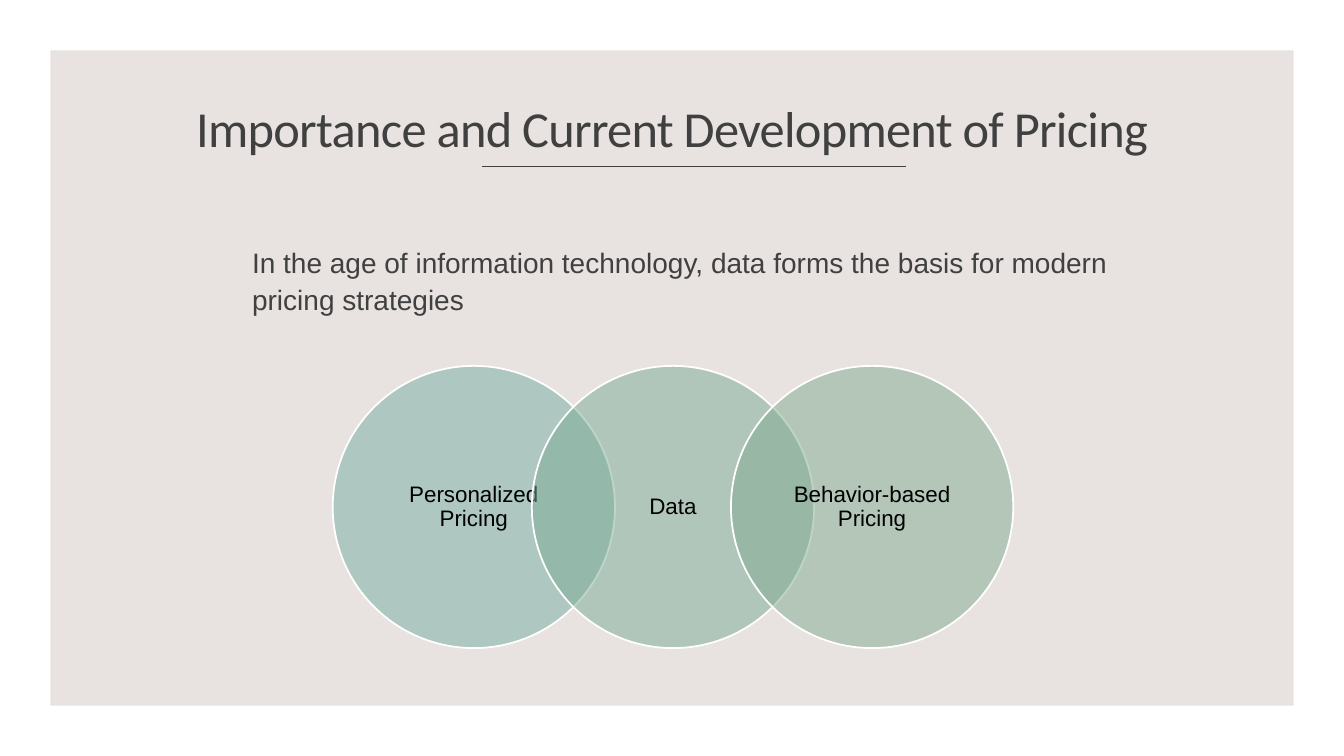
from pptx import Presentation
from pptx import util as u
from pptx.dml.color import RGBColor
from pptx.enum import shapes, text
from pptx.oxml.ns import qn
from lxml import etree

WHITE = RGBColor(0xFF, 0xFF, 0xFF)
BLACK = RGBColor(0x00, 0x00, 0x00)
SAND = RGBColor(0xE8, 0xE2, 0xE1)
GRAPHITE = RGBColor(0x40, 0x40, 0x40)
TEAL = RGBColor(0x76, 0xAD, 0xA0)
SEA = RGBColor(0x7C, 0xAC, 0x97)
SAGE = RGBColor(0x81, 0xAB, 0x90)

CELL = u.Inches(0.1)


def cells(*counts):
    return [round(count * CELL) for count in counts]


class PricingSlide:
    heading_font = "Calibri"
    body_font = "Arial"

    def __init__(self, deck):
        self.slide = deck.slides.add_slide(deck.slide_layouts[5])
        self.slide.background.fill.solid()
        self.slide.background.fill.fore_color.rgb = SAND

    def add_words(self, frame, words, font, size, color, align, spacing, insets=(0, 0)):
        frame.word_wrap = True
        frame.auto_size = text.MSO_AUTO_SIZE.NONE
        frame.vertical_anchor = text.MSO_ANCHOR.MIDDLE
        frame.margin_left = frame.margin_right = u.Inches(insets[0])
        frame.margin_top = frame.margin_bottom = u.Inches(insets[1])
        paragraph = frame.paragraphs[0]
        paragraph.alignment = align
        paragraph.line_spacing = spacing
        run = paragraph.add_run()
        run.text = words
        run.font.name = font
        run.font.size = u.Pt(size)
        run.font.color.rgb = color
        return run

    def title(self, words, *place):
        heading = self.slide.shapes.title
        heading.left, heading.top, heading.width, heading.height = cells(*place)
        run = self.add_words(heading.text_frame, words, self.heading_font, 36, GRAPHITE,
                             text.PP_ALIGN.CENTER, 0.9, (0.1, 0.05))
        run.font._element.set("spc", "-50")
        self.slide.shapes._spTree.append(heading.element)

    def panel(self, color, *place):
        panel = self.slide.shapes.add_shape(shapes.MSO_SHAPE.RECTANGLE, *cells(*place))
        panel.shadow.inherit = False
        panel.fill.solid()
        panel.fill.fore_color.rgb = color
        panel.line.fill.background()

    def rule(self, *ends):
        rule = self.slide.shapes.add_connector(shapes.MSO_CONNECTOR.STRAIGHT, *cells(*ends))
        rule.line.color.rgb = GRAPHITE
        rule.line.width = u.Pt(1)
        etree.SubElement(rule.element.spPr, qn("a:effectLst"))

    def statement(self, words, *place):
        box = self.slide.shapes.add_textbox(*cells(*place))
        self.add_words(box.text_frame, words, self.body_font, 20, GRAPHITE,
                       text.PP_ALIGN.LEFT, 1.1)

    def circle(self, words, color, *place):
        circle = self.slide.shapes.add_shape(shapes.MSO_SHAPE.OVAL, *cells(*place))
        circle.shadow.inherit = False
        circle.fill.solid()
        circle.fill.fore_color.rgb = color
        tint = circle.element.spPr.find(qn("a:solidFill")).find(qn("a:srgbClr"))
        etree.SubElement(tint, qn("a:alpha")).set("val", "50000")
        circle.line.color.rgb = WHITE
        circle.line.width = u.Pt(1.25)
        self.add_words(circle.text_frame, words, self.body_font, 16, BLACK,
                       text.PP_ALIGN.CENTER, 0.9, (0.15, 0.02))


def main():
    deck = Presentation()
    deck.slide_width, deck.slide_height = u.Inches(13.33), u.Inches(7.5)
    pricing = PricingSlide(deck)
    pricing.panel(WHITE, 0, 0, 133.3, 75)
    pricing.panel(SAND, 5, 5, 123.3, 65)
    pricing.title("Importance and Current Development of Pricing", 5, 9.5, 123.3, 7)
    pricing.rule(47.8, 16.5, 89.9, 16.5)
    pricing.statement("In the age of information technology, data forms the basis "
                      "for modern pricing strategies", 25, 23.2, 88.6, 9)
    themes = [("Personalized Pricing", TEAL), ("Data", SEA), ("Behavior-based Pricing", SAGE)]
    for index, (theme, color) in enumerate(themes):
        pricing.circle(theme, color, 33 + index * 19.75, 36.3, 28, 28)
    deck.save("out.pptx")


if __name__ == "__main__":
    main()
